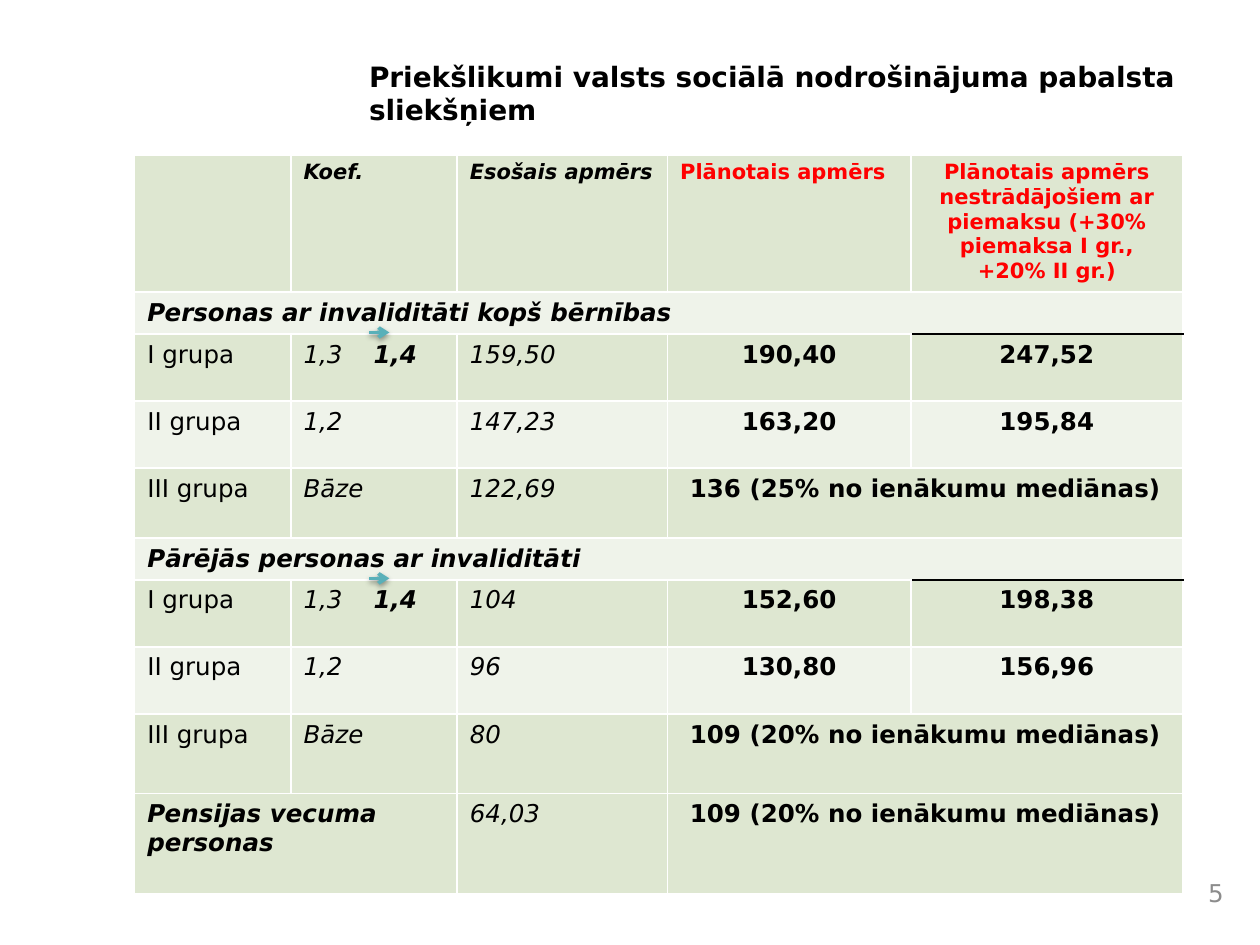
import pptx
import pptx.dml.color
import pptx.enum.shapes
import pptx.enum.text
import pptx.oxml
import pptx.oxml.ns
import pptx.util

Pt = pptx.util.Pt
Align = pptx.enum.text.PP_ALIGN
Anchor = pptx.enum.text.MSO_ANCHOR
SPACE = pptx.oxml.ns.nsdecls("a")

WIDTHS = [89.3, 95, 120.2, 139, 155.5]
HEIGHTS = [79, 24, 38.3, 38.3, 39.8, 24, 38.3, 38.3, 45.6, 57.4]
ROWS = [
    ["", "Koef.", "Esošais apmērs", "Plānotais apmērs",
     "Plānotais apmērs nestrādājošiem ar piemaksu (+30% piemaksa I gr., +20% II gr.)"],
    ["Personas ar invaliditāti kopš bērnības", None, None, None, None],
    ["I grupa", "1,3\t1,4", "159,50", "190,40", "247,52"],
    ["II grupa", "1,2", "147,23", "163,20", "195,84"],
    ["III grupa", "Bāze", "122,69", "136 (25% no ienākumu mediānas)", None],
    ["Pārējās personas ar invaliditāti", None, None, None, None],
    ["I grupa", "1,3\t1,4", "104", "152,60", "198,38"],
    ["II grupa", "1,2", "96", "130,80", "156,96"],
    ["III grupa", "Bāze", "80", "109 (20% no ienākumu mediānas)", None],
    ["Pensijas vecuma personas", None, "64,03", "109 (20% no ienākumu mediānas)", None],
]
PALE = {1, 3, 5, 7}
GROUPS = {2, 6}


def color(code):
    return pptx.dml.color.RGBColor.from_string(code)


class Deck:
    """Holds the style and the current slide, and draws each kind of element."""

    face = "DejaVu Sans"
    ink, red, grey, teal, white = "000000", "FF0000", "8C8C8C", "59B0B9", "FFFFFF"
    dark, light = "DEE7D1", "EFF3EA"

    def __init__(self, show):
        self.slide = show.slides.add_slide(show.slide_layouts[6])

    def style(self, run, size, code, bold=False, slant=False):
        font = run.font
        font.name, font.size = self.face, Pt(size)
        font.bold, font.italic = bold, slant
        font.color.rgb = color(code)

    def text(self, words, box, size, code, bold=False, align=Align.LEFT, anchor=Anchor.TOP):
        frame = self.slide.shapes.add_textbox(*map(Pt, box)).text_frame
        frame.word_wrap = True
        frame.vertical_anchor = anchor
        frame.text = words
        para = frame.paragraphs[0]
        para.alignment = align
        self.style(para.runs[0], size, code, bold)

    def edge(self, cell, side, code, width):
        props = cell._tc.get_or_add_tcPr()
        props.append(pptx.oxml.parse_xml(
            f'<a:ln{side} {SPACE} w="{Pt(width)}"><a:solidFill>'
            f'<a:srgbClr val="{code}"/></a:solidFill></a:ln{side}>'))

    def fill(self, cell, words, row, col, whole):
        head = row == 0
        cell.text_frame.text = words
        para = cell.text_frame.paragraphs[0]
        if col == 4 or (col == 3 and not head):
            para.alignment = Align.CENTER
        bold = head or whole or col > 2
        slant = whole or col in (1, 2) and True
        code = self.red if head and col > 2 else self.ink
        first, tab, second = words.partition("\t")
        if tab:
            para.text = first + tab
            para._p.get_or_add_pPr().append(pptx.oxml.parse_xml(
                f'<a:tabLst {SPACE}><a:tab pos="{Pt(40)}" algn="l"/></a:tabLst>'))
        for run in para.runs:
            self.style(run, 12 if head else 14, code, bold, slant)
        if tab:
            run = para.add_run()
            run.text = second
            self.style(run, 14, code, True, slant)

    def table(self, left, top):
        grid = self.slide.shapes.add_table(
            len(ROWS), len(WIDTHS), Pt(left), Pt(top), Pt(sum(WIDTHS)), Pt(sum(HEIGHTS))).table
        grid.first_row = grid.horz_banding = False
        for col, width in zip(grid.columns, WIDTHS):
            col.width = Pt(width)
        for row, height in zip(grid.rows, HEIGHTS):
            row.height = Pt(height)
        for r, line in enumerate(ROWS):
            for c, words in enumerate(line):
                cell = grid.cell(r, c)
                for side in "LRTB":
                    black = c == 4 and (side == "T" and r in GROUPS or side == "B" and r + 1 in GROUPS)
                    thick = 3 if r == 0 and side == "T" else 1
                    self.edge(cell, side, self.ink if black else self.white, thick)
                cell.fill.solid()
                cell.fill.fore_color.rgb = color(self.light if r in PALE else self.dark)
                if words is None:
                    continue
                last = c
                while last < 4 and line[last + 1] is None:
                    last += 1
                if last > c:
                    cell.merge(grid.cell(r, last))
                self.fill(cell, words, r, c, c == 0 and last > c)

    def arrow(self, left, top, length):
        line = self.slide.shapes.add_connector(
            pptx.enum.shapes.MSO_CONNECTOR.STRAIGHT, Pt(left), Pt(top), Pt(left + length), Pt(top))
        line.line.color.rgb = color(self.teal)
        line.line.width = Pt(2)
        line.line._get_or_add_ln().append(
            pptx.oxml.parse_xml(f'<a:tailEnd {SPACE} type="arrow"/>'))
        line._element.spPr.append(pptx.oxml.parse_xml(
            f'<a:effectLst {SPACE}><a:outerShdw blurRad="{Pt(3.1)}" dist="{Pt(1.6)}" '
            f'dir="5400000" rotWithShape="0"><a:srgbClr val="{self.ink}">'
            '<a:alpha val="38000"/></a:srgbClr></a:outerShdw></a:effectLst>'))


def main():
    show = pptx.Presentation()
    show.slide_width, show.slide_height = Pt(720), Pt(540)
    deck = Deck(show)
    deck.table(77, 88)
    deck.text("Priekšlikumi valsts sociālā nodrošinājuma pabalsta sliekšņiem",
              (203.8, 30.2, 480.2, 61.2), 16, deck.ink, bold=True)
    deck.text("5", (664.5, 498.2, 41.8, 23.8), 14, deck.grey,
              align=Align.RIGHT, anchor=Anchor.MIDDLE)
    for top in (190, 330.5):
        deck.arrow(211, top, 11.5)
    show.save("out.pptx")


if __name__ == "__main__":
    main()
